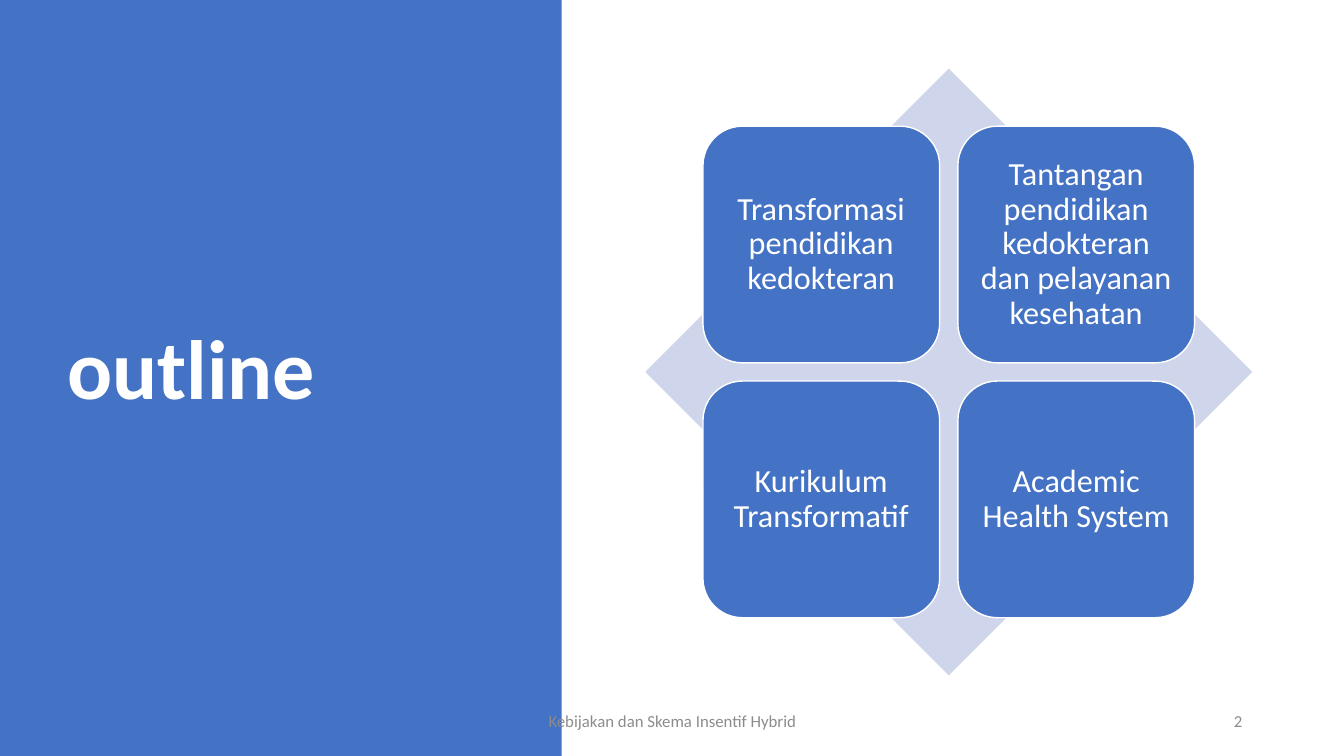
from pptx import Presentation
from pptx.dml.color import RGBColor
from pptx.enum.shapes import MSO_SHAPE
from pptx.enum.text import MSO_ANCHOR, PP_ALIGN
from pptx.util import Inches, Pt

RECTANGLE, DIAMOND, ROUNDED = MSO_SHAPE.RECTANGLE, MSO_SHAPE.DIAMOND, MSO_SHAPE.ROUNDED_RECTANGLE
LEFT, CENTER, RIGHT = PP_ALIGN.LEFT, PP_ALIGN.CENTER, PP_ALIGN.RIGHT
MIDDLE = MSO_ANCHOR.MIDDLE

WIDTH, HEIGHT = 13.33, 7.5
BLUE, PALE, WHITE, GRAY = "4472C4", "CFD5EA", "FFFFFF", "8C8C8C"
TOPICS = [
    "Transformasi pendidikan kedokteran",
    "Tantangan pendidikan kedokteran dan pelayanan kesehatan",
    "Kurikulum Transformatif",
    "Academic Health System",
]


def color(value):
    """Turn a hex string into a colour."""
    return RGBColor.from_string(value)


def write(shape, text, size, text_color, align, bold=False, spacing=1.0):
    """Set one vertically centred paragraph in a shape."""
    frame = shape.text_frame
    frame.word_wrap = True
    frame.vertical_anchor = MIDDLE
    frame.text = text
    paragraph = frame.paragraphs[0]
    paragraph.alignment = align
    paragraph.line_spacing = spacing
    font = paragraph.runs[0].font
    font.name, font.size, font.bold = "Calibri", Pt(size), bold
    font.color.rgb = color(text_color)


def add_label(slide, box, *style, **options):
    """Add a text box with styled text."""
    write(slide.shapes.add_textbox(*map(Inches, box)), *style, **options)


def add_block(slide, kind, box, fill, line=None):
    """Add a flat filled shape with an optional outline."""
    shape = slide.shapes.add_shape(kind, *map(Inches, box))
    shape.shadow.inherit = False
    shape.fill.solid()
    shape.fill.fore_color.rgb = color(fill)
    if line:
        shape.line.color.rgb = color(line)
        shape.line.width = Pt(1)
    else:
        shape.line.fill.background()
    return shape


def add_title_panel(slide, box):
    """Fill the panel and centre the title vertically in it."""
    left, top, width, height = box
    add_block(slide, RECTANGLE, box, BLUE)
    title_box = (left + 0.57, top + 0.68, width - 1.41, height - 1.48)
    add_label(slide, title_box, "outline", 60, WHITE, LEFT, bold=True, spacing=0.9)


def add_footer(slide, box):
    """Place the footer text and the slide number in a strip."""
    left, top, width, height = box
    number_width = 3
    add_label(slide, (left, top, 4.5, height),
              "Kebijakan dan Skema Insentif Hybrid", 12, GRAY, CENTER)
    add_label(slide, (left + width - number_width, top, number_width, height),
              "2", 12, GRAY, RIGHT)


def add_matrix(slide, box):
    """Draw a diamond with a two by two grid of topics on it."""
    left, top, side, _ = box
    add_block(slide, DIAMOND, box, PALE)
    margin, tile, pitch = side * 0.095, side * 0.39, side * 0.42
    for index, topic in enumerate(TOPICS):
        row, column = divmod(index, 2)
        tile_box = (left + margin + column * pitch, top + margin + row * pitch, tile, tile)
        shape = add_block(slide, ROUNDED, tile_box, BLUE, WHITE)
        frame = shape.text_frame
        frame.margin_left = frame.margin_right = Inches(0.1)
        frame.margin_top = frame.margin_bottom = Inches(0.1)
        write(shape, topic, 23, WHITE, CENTER, spacing=0.9)


def main():
    """Build and save the outline slide."""
    presentation = Presentation()
    presentation.slide_width, presentation.slide_height = Inches(WIDTH), Inches(HEIGHT)
    slide = presentation.slides.add_slide(presentation.slide_layouts[6])
    add_title_panel(slide, (0, 0, 5.57, HEIGHT))
    add_footer(slide, (4.42, 6.95, 8, 0.4))
    add_matrix(slide, (6.4, 0.68, 6.02, 6.02))
    presentation.save("out.pptx")


if __name__ == "__main__":
    main()
